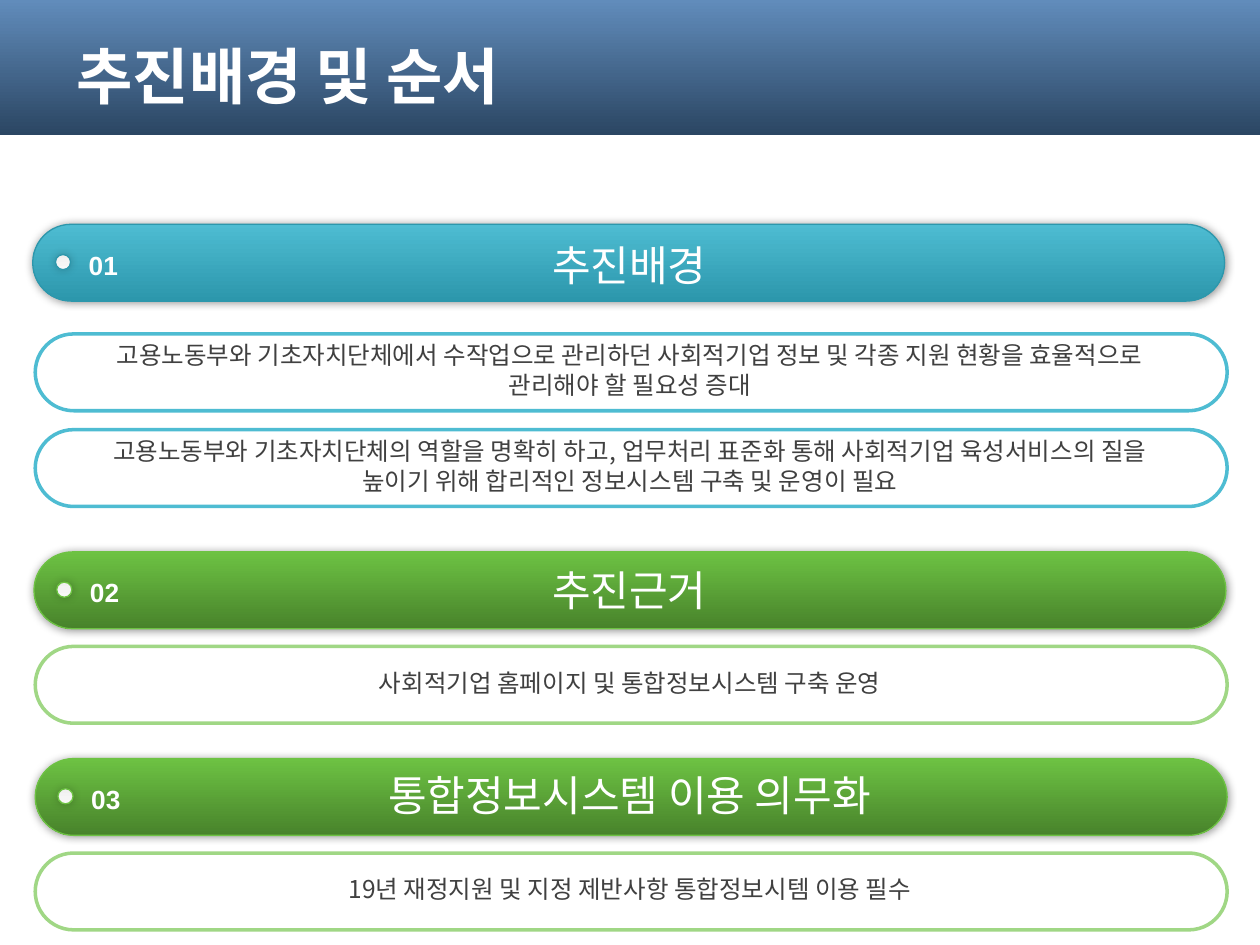
from lxml.etree import SubElement as Sub
from pptx import Presentation as Deck
from pptx.dml.color import RGBColor as Rgb
from pptx.enum.shapes import MSO_SHAPE as Form
from pptx.enum.text import MSO_ANCHOR as Anchor, PP_ALIGN as Align
from pptx.oxml.ns import qn
from pptx.util import Inches, Pt

# Grid of 100 columns by 75 rows
WIDE, HIGH = Inches(10), Inches(7.5)
COL, ROW = WIDE / 100, HIGH / 75
BAR_W, BAR_H = 94.6, 6.1
RING_X, DOT = 2.8, 1.2

INK = {
    "white": "FFFFFF", "text": "404040", "black": "000000",
    "top": ("618CBB", "2B4663"), "dot": ("F0F0F0", "F8F8F8"),
    "blue": ("4EBCD2", "2C97AC"), "blue_edge": "2C97AC", "blue_ring": "4EBCD2",
    "green": ("6DC243", "48832B"), "green_edge": "6DC243", "green_ring": "A0D785",
}

# Number, heading, hue, left, top, rows down to heading, notes (top, lines, text)
PARTS = [
    ("01", "추진배경", "blue", 2.6, 17.8, 1.2, [
        (26.5, 2, "고용노동부와 기초자치단체에서 수작업으로 관리하던 사회적기업 정보 및 "
                  "각종 지원 현황을 효율적으로 관리해야 할 필요성 증대"),
        (34.1, 2, "고용노동부와 기초자치단체의 역할을 명확히 하고, 업무처리 표준화 통해 "
                  "사회적기업 육성서비스의 질을 높이기 위해 합리적인 정보시스템 구축 및 운영이 필요")]),
    ("02", "추진근거", "green", 2.7, 43.8, 1, [
        (51.3, 1, "사회적기업 홈페이지 및 통합정보시스템 구축 운영")]),
    ("03", "통합정보시스템 이용 의무화", "green", 2.8, 60.2, 0.9, [
        (67.7, 1, "19년 재정지원 및 지정 제반사항 통합정보시템 이용 필수")]),
]


def place(x, y, w, h):
    return round(x * COL), round(y * ROW), round(w * COL), round(h * ROW)


def shade(shape, pair):
    shape.fill.gradient()
    shape.fill.gradient_angle = 270
    for stop, tone, spot in zip(shape.fill.gradient_stops, pair, (0, 1)):
        stop.color.rgb = Rgb.from_string(tone)
        stop.position = spot


def glow(shape, alpha):
    """Soft shadow on all sides."""
    effect = shape._element.spPr.find(qn("a:effectLst"))
    outer = Sub(effect, qn("a:outerShdw"), blurRad=str(Pt(5)), dist="0",
                dir="0", rotWithShape="0")
    tone = Sub(outer, qn("a:srgbClr"), val=INK["black"])
    Sub(tone, qn("a:alpha"), val=str(alpha * 1000))


def draw(shapes, form, area, fill, edge=None, width=0.75):
    shape = shapes.add_shape(form, *place(*area))
    shape.shadow.inherit = False
    if form == Form.ROUNDED_RECTANGLE:
        shape.adjustments[0] = 0.5
    if isinstance(fill, tuple):
        shade(shape, fill)
    else:
        shape.fill.solid()
        shape.fill.fore_color.rgb = Rgb.from_string(fill)
    if edge:
        shape.line.color.rgb = Rgb.from_string(edge)
        shape.line.width = Pt(width)
    else:
        shape.line.fill.background()
    return shape


def write(shapes, area, text, size, tone="white", face="Arial",
          bold=False, align=Align.CENTER, inset=True):
    frame = shapes.add_textbox(*place(*area)).text_frame
    frame.word_wrap = True
    frame.vertical_anchor = Anchor.MIDDLE
    if not inset:
        frame.margin_left = frame.margin_right = 0
        frame.margin_top = frame.margin_bottom = 0
    para = frame.paragraphs[0]
    para.text = text
    para.alignment = align
    font = para.font
    font.size, font.bold, font.name = Pt(size), bold, face
    font.color.rgb = Rgb.from_string(INK[tone])


def banner(shapes, text):
    draw(shapes, Form.RECTANGLE, (0, 0, 100, 10.7), INK["top"])
    write(shapes, (5.1, 1.3, 90, 9.3), text, 35, bold=True, align=Align.LEFT)


def bar(shapes, num, head, hue, x, y, drop):
    group = shapes.add_group_shape().shapes
    edge = INK[hue + "_edge"]
    body = draw(group, Form.ROUNDED_RECTANGLE, (x, y, BAR_W, BAR_H), INK[hue], edge)
    glow(body, 40)
    dot = draw(group, Form.OVAL, (x + 1.8, y + 2.4, DOT, DOT), INK["dot"], edge)
    glow(dot, 20)
    write(group, (28.8, y + drop, 42.3, 4), head, 24, inset=False)
    write(group, (x + 4.1, y + 1.8, 3, 2.8), num, 15, bold=True, inset=False)


def note(shapes, hue, y, lines, text):
    draw(shapes, Form.ROUNDED_RECTANGLE, (RING_X, y, BAR_W, BAR_H),
         INK["white"], INK[hue + "_ring"], 2)
    tall = 1.1 + 2.3 * lines
    write(shapes, (5.9, y + (BAR_H - tall) / 2 - 0.2, 88.2, tall), text, 14,
          tone="text", face="Noto Sans CJK KR")


def main():
    deck = Deck()
    deck.slide_width, deck.slide_height = WIDE, HIGH
    shapes = deck.slides.add_slide(deck.slide_layouts[6]).shapes
    banner(shapes, "추진배경 및 순서")
    # Each part: a numbered bar with its notes below
    for num, head, hue, x, y, drop, notes in PARTS:
        bar(shapes, num, head, hue, x, y, drop)
        for top, lines, text in notes:
            note(shapes, hue, top, lines, text)
    deck.save("out.pptx")


if __name__ == "__main__":
    main()
